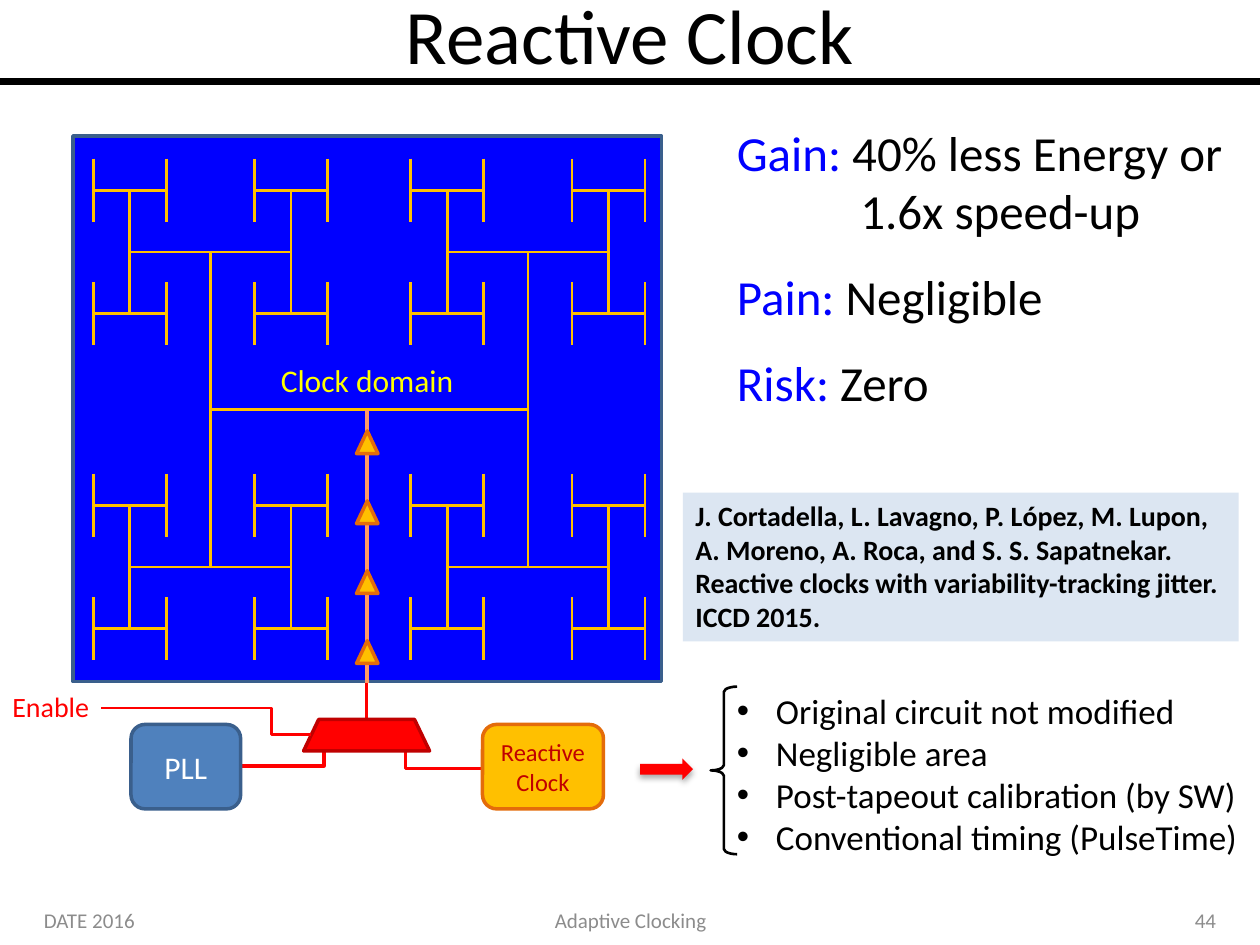
from dataclasses import dataclass

from lxml.etree import SubElement
from pptx import Presentation
from pptx.dml.color import RGBColor
from pptx.enum.shapes import MSO_CONNECTOR as LINK, MSO_SHAPE as SHAPE
from pptx.enum.text import MSO_ANCHOR as ANCHOR, PP_ALIGN as ALIGN
from pptx.oxml.ns import qn
from pptx.slide import Slide
from pptx.util import Inches, Pt

COLORS = {
    "black": "000000", "white": "FFFFFF", "gray": "8C8C8C", "blue": "0000FF",
    "navy": "3A5F8C", "steel": "4F81BD", "pale": "DCE6F2", "gold": "FFC000",
    "orange": "E46C0A", "peach": "FF9966", "red": "FF0000", "crimson": "C00000",
    "yellow": "FFFF00",
}
TREE_ARMS = [(1.26, 1.25), (0.64, 0.49), (0.29, 0.25)]


def rgb(name):
    return RGBColor.from_string(COLORS[name])


def style_line(line, color, width):
    line.color.rgb = rgb(color)
    line.width = Pt(width)


def write(frame, paragraphs, size, align=ALIGN.LEFT, anchor=ANCHOR.TOP,
          bold=False, wrap=False):
    frame.word_wrap = wrap
    frame.vertical_anchor = anchor
    font_format = {"name": "Calibri", "size": Pt(size), "bold": bold}
    for index, runs in enumerate(paragraphs):
        paragraph = frame.paragraphs[0] if index == 0 else frame.add_paragraph()
        paragraph.alignment = align
        for words, color in runs:
            run = paragraph.add_run()
            run.text = words
            run.font.color.rgb = rgb(color)
            for key, value in font_format.items():
                setattr(run.font, key, value)


def indent(paragraph, left, hanging=0, bullet=None):
    props = paragraph._p.get_or_add_pPr()
    props.set("marL", str(Inches(left)))
    props.set("indent", str(Inches(-hanging)))
    if bullet:
        SubElement(props, qn("a:buFont"), typeface="Arial")
        SubElement(props, qn("a:buChar"), char=bullet)


@dataclass
class Region:
    slide: Slide
    left: float
    top: float

    def point(self, x, y):
        return Inches(self.left + x), Inches(self.top + y)

    def line(self, start, end, color, width, kind=LINK.STRAIGHT):
        link = self.slide.shapes.add_connector(
            kind, *self.point(*start), *self.point(*end))
        style_line(link.line, color, width)
        SubElement(link._element.spPr, qn("a:effectLst"))
        return link

    def wire(self, points, color, width):
        first, *rest = [self.point(*p) for p in points]
        builder = self.slide.shapes.build_freeform(*first)
        builder.add_line_segments(rest, close=False)
        wire = builder.convert_to_shape()
        wire.shadow.inherit = False
        wire.fill.background()
        style_line(wire.line, color, width)

    def shape(self, kind, x, y, width, height, fill=None, line=None, weight=2):
        shape = self.slide.shapes.add_shape(
            kind, *self.point(x, y), Inches(width), Inches(height))
        shape.shadow.inherit = False
        if fill:
            shape.fill.solid()
            shape.fill.fore_color.rgb = rgb(fill)
        else:
            shape.fill.background()
        if line:
            style_line(shape.line, line, weight)
        else:
            shape.line.fill.background()
        return shape

    def text(self, x, y, width, height, paragraphs, size, **text_format):
        frame = self.slide.shapes.add_textbox(
            *self.point(x, y), Inches(width), Inches(height)).text_frame
        write(frame, paragraphs, size, **text_format)
        return frame


def add_header(slide):
    title = slide.shapes.title
    box = {"left": 0.5, "top": -0.11, "width": 9, "height": 0.75}
    for key, value in box.items():
        setattr(title, key, Inches(value))
    write(title.text_frame, [[("Reactive Clock", "black")]], 44,
          align=ALIGN.CENTER, anchor=ANCHOR.MIDDLE, wrap=True)
    Region(slide, 0, 0.65).line((0, 0), (10, 0), "black", 4)


def add_clock_tree(region, x, y, levels):
    if not levels:
        return
    (dx, dy), *finer = levels
    region.line((x - dx, y), (x + dx, y), "gold", 1.5)
    for arm in (x - dx, x + dx):
        region.line((arm, y - dy), (arm, y + dy), "gold", 1.5)
        for tip in (y - dy, y + dy):
            add_clock_tree(region, arm, tip, finer)


def add_clock_domain(region):
    region.shape(SHAPE.RECTANGLE, 0, 0, 4.67, 4.33, "blue", "navy")
    add_clock_tree(region, 2.35, 2.17, TREE_ARMS)
    region.line((2.33, 2.17), (2.33, 4.34), "peach", 2.25)
    for buffer in range(4):
        region.shape(SHAPE.ISOSCELES_TRIANGLE, 2.25, 2.34 + 0.555 * buffer,
                     0.17, 0.18, "gold", "orange")
    region.text(1.55, 1.74, 1.59, 0.4, [[("Clock domain", "yellow")]], 18)


def add_clock_sources(region):
    region.wire([(3.83, 0.68), (3.22, 0.68), (3.22, 0.49)], "red", 2)
    region.wire([(1.92, 0.66), (2.57, 0.66), (2.57, 0.36), (2.91, 0.36),
                 (2.91, 0)], "red", 2)
    pll = region.shape(SHAPE.ROUNDED_RECTANGLE, 1.04, 0.33, 0.87, 0.67,
                       "steel", "navy")
    write(pll.text_frame, [[("PLL", "white")]], 18,
          align=ALIGN.CENTER, anchor=ANCHOR.MIDDLE)
    reactive = region.shape(SHAPE.ROUNDED_RECTANGLE, 3.83, 0.33, 0.96, 0.67,
                            "gold", "orange")
    reactive.text_frame.margin_left = reactive.text_frame.margin_right = 0
    write(reactive.text_frame,
          [[("Reactive", "crimson")], [("Clock", "crimson")]], 14,
          align=ALIGN.CENTER, anchor=ANCHOR.MIDDLE)
    mux = region.shape(SHAPE.TRAPEZOID, 2.41, 0.29, 1, 0.25, "red", "crimson")
    mux.adjustments[0] = 0.48
    enable = region.line((2.47, 0.41), (0.8, 0.2), "red", 1.5, LINK.ELBOW)
    guides = enable._element.spPr.find(qn("a:prstGeom")).get_or_add_avLst()
    SubElement(guides, qn("a:gd"), name="adj1", fmla="val 18800")
    region.text(0, 0, 0.82, 0.37, [[("Enable", "red")]], 16)


def add_claims(region):
    gain = region.text(0, 0, 4.1, 1.04, [
        [("Gain:", "blue"), (" 40% less Energy or", "black")],
        [("1.6x speed-up", "black")]], 28)
    indent(gain.paragraphs[1], 0.98)
    for y, width, label, verdict in [(1.15, 2.65, "Pain:", " Negligible"),
                                     (1.83, 1.74, "Risk:", " Zero")]:
        region.text(0, y, width, 0.57,
                    [[(label, "blue"), (verdict, "black")]], 28)


def add_citation(region):
    panel = region.shape(SHAPE.RECTANGLE, 0, 0, 4.41, 1.18, "pale")
    citation = ["J. Cortadella, L. Lavagno, P. López, M. Lupon,",
                "A. Moreno, A. Roca, and S. S. Sapatnekar.",
                "Reactive clocks with variability-tracking jitter.",
                "ICCD 2015."]
    write(panel.text_frame, [[(row, "black")] for row in citation], 16, bold=True)


def add_benefits(region):
    benefits = ["Original circuit not modified", "Negligible area",
                "Post-tapeout calibration (by SW)",
                "Conventional timing (PulseTime)"]
    frame = region.text(0.67, 0, 4.28, 1.45,
                        [[(item, "black")] for item in benefits], 20, wrap=True)
    for paragraph in frame.paragraphs:
        indent(paragraph, 0.31, 0.31, "•")
    brace = region.shape(SHAPE.LEFT_BRACE, 0.56, 0.03, 0.21, 1.33,
                         line="black", weight=1.5)
    brace.adjustments[0] = 0.2
    arrow = region.shape(SHAPE.RIGHT_ARROW, 0, 0.6, 0.42, 0.17, "red")
    effects = arrow._element.spPr.find(qn("a:effectLst"))
    shadow = SubElement(effects, qn("a:outerShdw"), blurRad=str(Pt(3.5)),
                        dist=str(Pt(2.2)), dir="5400000", rotWithShape="0")
    tint = SubElement(shadow, qn("a:srgbClr"), val=COLORS["black"])
    SubElement(tint, qn("a:alpha"), val="32000")


def add_footer(region):
    for x, width, words, align in [(0, 2.33, "DATE 2016", ALIGN.LEFT),
                                   (3.17, 3.17, "Adaptive Clocking", ALIGN.CENTER),
                                   (7.17, 2.33, "44", ALIGN.RIGHT)]:
        region.text(x, 0, width, 0.4, [[(words, "gray")]], 12,
                    align=align, anchor=ANCHOR.MIDDLE, wrap=True)


def main():
    deck = Presentation()
    deck.slide_width, deck.slide_height = Inches(10), Inches(7.5)
    slide = deck.slides.add_slide(deck.slide_layouts[5])
    add_header(slide)
    add_clock_domain(Region(slide, 0.58, 1.08))
    add_clock_sources(Region(slide, 0, 5.42))
    add_claims(Region(slide, 5.75, 0.92))
    add_citation(Region(slide, 5.42, 3.91))
    add_benefits(Region(slide, 5.08, 5.42))
    add_footer(Region(slide, 0.25, 7.1))
    deck.save("out.pptx")


if __name__ == "__main__":
    main()
